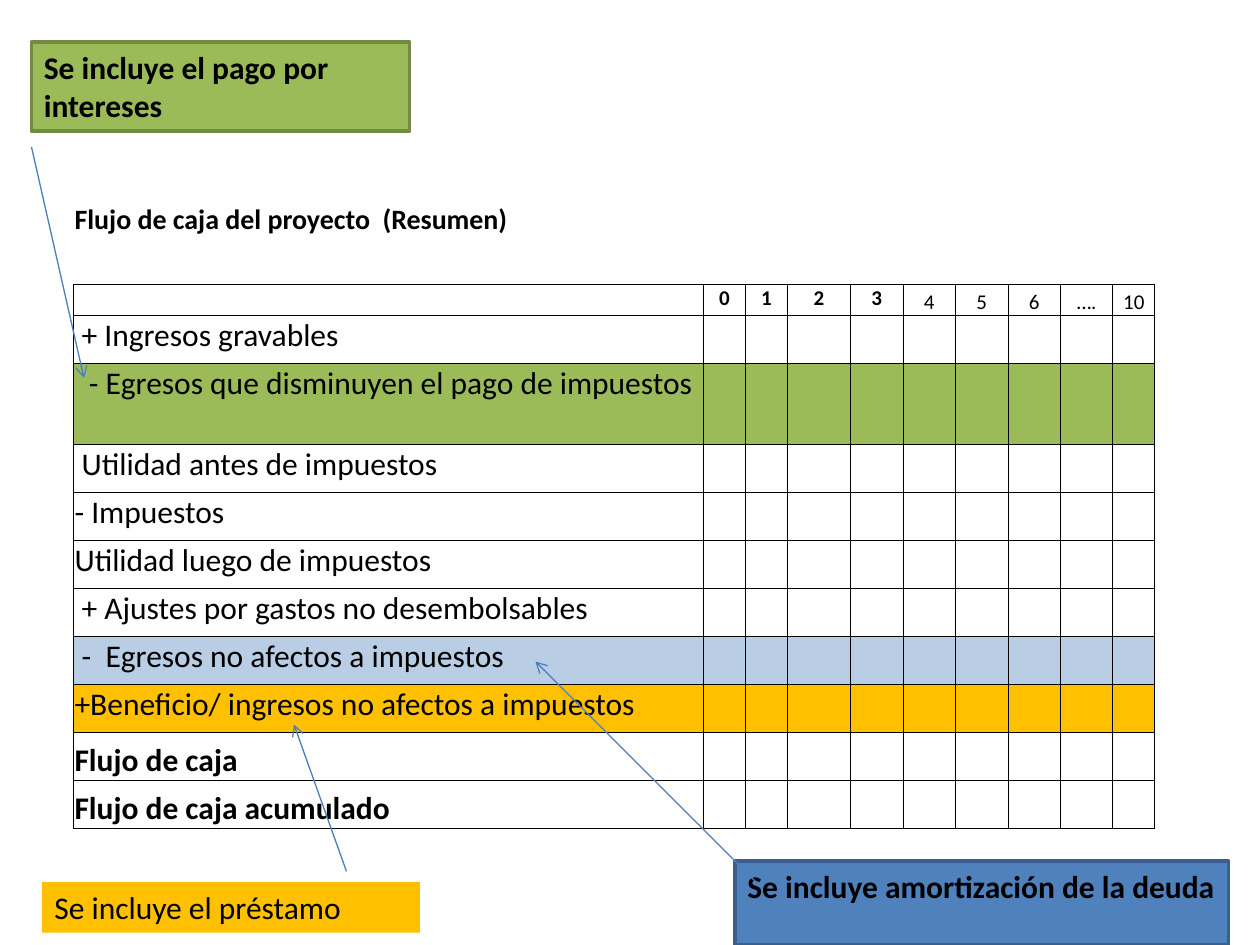
from lxml import etree
from pptx import Presentation
from pptx.dml.color import RGBColor
from pptx.enum import shapes, text
from pptx.oxml.ns import qn
from pptx.util import Pt

COLORS = {
    "black": "000000", "white": "FFFFFF", "green": "9BBB59",
    "dark_green": "738A42", "pale_blue": "B9CDE5", "blue": "4F81BD",
    "dark_blue": "3A5F8C", "arrow": "4B7EBC", "orange": "FFC000",
}
FONT = "Calibri"
NO_STYLE = "{2D5ABB26-0587-4C30-8999-92F81FD0307C}"
TITLE = "Flujo de caja del proyecto  (Resumen)"
PERIODS = ["0", "1", "2", "3", "4", "5", "6", "….", "10"]
BOLD_PERIODS = 4
# label, fill, bold total
CONCEPTS = [
    (" + Ingresos gravables", "white", False),
    ("  - Egresos que disminuyen el pago de impuestos", "green", False),
    (" Utilidad antes de impuestos", "white", False),
    ("- Impuestos", "white", False),
    ("Utilidad luego de impuestos", "white", False),
    (" + Ajustes por gastos no desembolsables", "white", False),
    (" -  Egresos no afectos a impuestos", "pale_blue", False),
    ("+Beneficio/ ingresos no afectos a impuestos", "orange", False),
    ("Flujo de caja", "white", True),
    ("Flujo de caja acumulado", "white", True),
]
COLUMN_WIDTHS = [360, 24, 24, 36, 30, 30, 30, 30, 30, 24]
ROW_HEIGHT, HEADER_HEIGHT, TALL_HEIGHT = 27.4, 17.5, 46.6
TITLE_ROW, GAP_ROW, HEADER_ROW, FIRST_CONCEPT = 0, 1, 2, 3


def rgb(name):
    return RGBColor.from_string(COLORS[name])


def format_text(frame, size, bold=False):
    for run in frame.paragraphs[0].runs:
        run.font.name = FONT
        run.font.size = Pt(size)
        run.font.bold = bold
        run.font.color.rgb = rgb("black")


def write_cell(cell, words="", size=12, bold=False, center=False, bottom=False):
    cell.margin_left = cell.margin_right = cell.margin_top = Pt(0.6)
    cell.margin_bottom = Pt(0)
    cell.vertical_anchor = text.MSO_ANCHOR.BOTTOM if bottom else text.MSO_ANCHOR.TOP
    paragraph = cell.text_frame.paragraphs[0]
    if words:
        paragraph.text = words
        format_text(cell.text_frame, size, bold)
        if center:
            paragraph.alignment = text.PP_ALIGN.CENTER
    else:
        # keeps an empty cell from stretching its row
        etree.SubElement(paragraph._p, qn("a:endParaRPr"), sz=str(size * 100))


def frame_cell(cell, fill, sides="LRTB"):
    properties = cell._tc.get_or_add_tcPr()
    for side in sides:
        line = etree.SubElement(properties, qn(f"a:ln{side}"), w=str(Pt(0.5)))
        solid = etree.SubElement(line, qn("a:solidFill"))
        etree.SubElement(solid, qn("a:srgbClr"), val=COLORS["black"])
    if fill:
        cell.fill.solid()
        cell.fill.fore_color.rgb = rgb(fill)


def add_cash_flow(slide, left, top):
    heights = [ROW_HEIGHT] * (FIRST_CONCEPT + len(CONCEPTS))
    heights[HEADER_ROW] = HEADER_HEIGHT
    heights[FIRST_CONCEPT + 1] = TALL_HEIGHT
    frame = slide.shapes.add_table(
        len(heights), len(COLUMN_WIDTHS), Pt(left), Pt(top),
        Pt(sum(COLUMN_WIDTHS)), Pt(sum(heights)))
    table = frame.table
    table.first_row = table.horz_banding = False
    table._tbl.tblPr.find(qn("a:tableStyleId")).text = NO_STYLE
    for column, width in zip(table.columns, COLUMN_WIDTHS):
        column.width = Pt(width)
    for row, height in zip(table.rows, heights):
        row.height = Pt(height)

    table.cell(TITLE_ROW, 0).merge(table.cell(TITLE_ROW, 1))
    for column in range(len(COLUMN_WIDTHS)):
        title, gap, header = (table.cell(row, column)
                              for row in (TITLE_ROW, GAP_ROW, HEADER_ROW))
        write_cell(title, "" if column else TITLE, 16, True, bottom=True)
        write_cell(gap)
        frame_cell(gap, None, "B")
        bold = column <= BOLD_PERIODS
        write_cell(header, PERIODS[column - 1] if column else "", 12, bold,
                   center=True, bottom=not bold)
        frame_cell(header, "white" if bold else None)
        for row, (label, fill, total) in enumerate(CONCEPTS, FIRST_CONCEPT):
            cell = table.cell(row, column)
            write_cell(cell, "" if column else label, 18, total, bottom=total)
            frame_cell(cell, fill)


def add_note(slide, box, words, fill, border=None, bold=True):
    note = slide.shapes.add_shape(
        shapes.MSO_SHAPE.RECTANGLE, *(Pt(length) for length in box))
    note.shadow.inherit = False
    note.fill.solid()
    note.fill.fore_color.rgb = rgb(fill)
    if border:
        note.line.color.rgb = rgb(border)
        note.line.width = Pt(2)
    else:
        note.line.fill.background()
    frame = note.text_frame
    frame.word_wrap = True
    frame.vertical_anchor = text.MSO_ANCHOR.TOP
    frame.text = words
    frame.paragraphs[0].alignment = text.PP_ALIGN.LEFT
    format_text(frame, 18, bold)


def add_arrow(slide, start, end):
    arrow = slide.shapes.add_connector(
        shapes.MSO_CONNECTOR.STRAIGHT, *(Pt(length) for length in start + end))
    arrow.line.color.rgb = rgb("arrow")
    arrow.line.width = Pt(0.75)
    etree.SubElement(arrow.line._get_or_add_ln(), qn("a:tailEnd"), type="arrow")
    etree.SubElement(arrow._element.spPr, qn("a:effectLst"))


def main():
    presentation = Presentation()
    presentation.slide_width, presentation.slide_height = Pt(720), Pt(540)
    slide = presentation.slides.add_slide(presentation.slide_layouts[6])
    add_cash_flow(slide, 42, 108)
    add_note(slide, (18, 24, 216, 51), "Se incluye el pago por intereses",
             "green", "dark_green")
    add_arrow(slide, (18, 84), (48, 216))
    add_note(slide, (420, 492, 282, 48), "Se incluye amortización de la deuda",
             "blue", "dark_blue")
    add_arrow(slide, (432, 504), (306, 378))
    add_note(slide, (24, 504, 216, 29), "Se incluye el préstamo", "orange",
             bold=False)
    add_arrow(slide, (198, 498), (168, 414))
    presentation.save("out.pptx")


if __name__ == "__main__":
    main()
